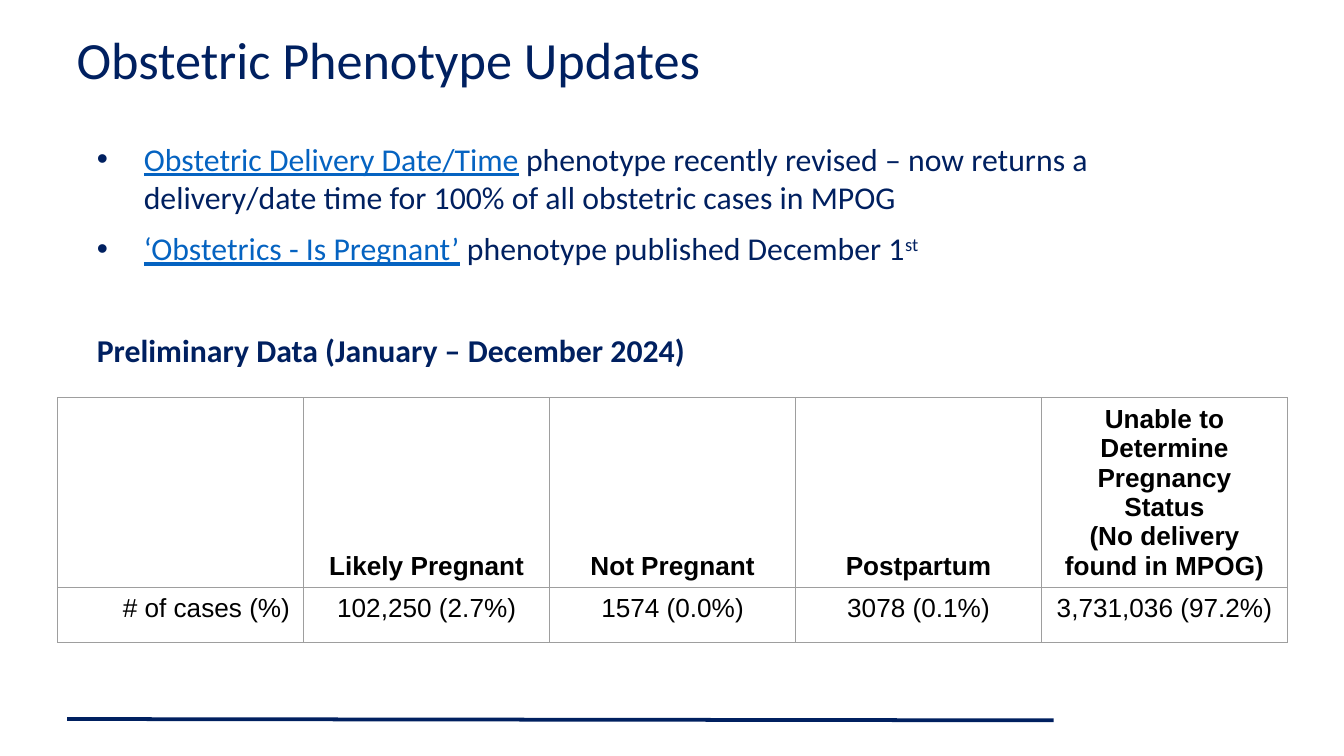
"""Build the obstetric phenotype updates slide."""
from lxml.etree import SubElement
from pptx import Presentation
from pptx.dml.color import RGBColor
from pptx.enum.shapes import MSO_CONNECTOR
from pptx.enum.text import MSO_ANCHOR, MSO_AUTO_SIZE, PP_ALIGN
from pptx.oxml.ns import qn
from pptx.util import Inches, Pt

NAVY = RGBColor(0x00, 0x20, 0x60)
LINK_BLUE = RGBColor(0x05, 0x63, 0xC1)
BLACK = RGBColor(0x00, 0x00, 0x00)
GRAY = RGBColor(0x9E, 0x9E, 0x9E)


def add_run(paragraph, text, size, color, font="Calibri", bold=False):
    run = paragraph.add_run()
    run.text = text
    run.font.name = font
    run.font.size = Pt(size)
    run.font.bold = bold
    run.font.color.rgb = color
    return run


def add_borders(cell):
    properties = cell._tc.get_or_add_tcPr()
    for side in ("a:lnL", "a:lnR", "a:lnT", "a:lnB"):
        border = SubElement(properties, qn(side), w=str(Pt(0.75)))
        fill = SubElement(border, qn("a:solidFill"))
        SubElement(fill, qn("a:srgbClr"), val=str(GRAY))


prs = Presentation()
prs.slide_width = Inches(10)
prs.slide_height = Inches(10 * 9 / 16)
slide = prs.slides.add_slide(prs.slide_layouts[1])

footer_rule = slide.shapes.add_connector(
    MSO_CONNECTOR.STRAIGHT, Inches(0.5), Inches(5.35), Inches(7.84), Inches(5.36))
footer_rule.line.color.rgb = NAVY
footer_rule.line.width = Pt(2)
SubElement(footer_rule._element.spPr, qn("a:effectLst"))

title = slide.shapes.title
body = slide.placeholders[1]
for holder, top, height, anchor in (
    (title, 0.08, 0.63, MSO_ANCHOR.BOTTOM),
    (body, 1, 4.06, MSO_ANCHOR.TOP),
):
    holder.left, holder.top = Inches(0.5), Inches(top)
    holder.width, holder.height = Inches(9), Inches(height)
    frame = holder.text_frame
    frame.word_wrap = True
    frame.auto_size = MSO_AUTO_SIZE.NONE
    frame.vertical_anchor = anchor
    frame.margin_left = frame.margin_right = Inches(0.07)
    frame.margin_top = frame.margin_bottom = Inches(0.04)

heading = title.text_frame.paragraphs[0]
heading.alignment = PP_ALIGN.LEFT
add_run(heading, "Obstetric Phenotype Updates", 28, NAVY)

updates = [
    ("Obstetric Delivery Date/Time",
     " phenotype recently revised – now returns a delivery/date time "
     "for 100% of all obstetric cases in MPOG"),
    ("‘Obstetrics - Is Pregnant’", " phenotype published December 1"),
]
for index, (phenotype, news) in enumerate(updates):
    update = body.text_frame.paragraphs[0] if index == 0 else body.text_frame.add_paragraph()
    update.space_before = Pt(7 if index else 0)
    layout = update._p.get_or_add_pPr()
    layout.set("marL", str(Inches(0.5)))
    layout.set("indent", str(Inches(-0.35)))
    bullet_color = SubElement(layout, qn("a:buClr"))
    SubElement(bullet_color, qn("a:srgbClr"), val=str(NAVY))
    SubElement(layout, qn("a:buFont"), typeface="Arial")
    SubElement(layout, qn("a:buChar"), char="•")
    add_run(update, phenotype, 17, LINK_BLUE).font.underline = True
    add_run(update, news, 17, NAVY)
ordinal = add_run(update, "st", 17, NAVY)
ordinal._r.get_or_add_rPr().set("baseline", "30000")

data_heading = body.text_frame.add_paragraph()
data_heading.space_before = Pt(34)
layout = data_heading._p.get_or_add_pPr()
layout.set("marL", str(Inches(0.15)))
layout.set("indent", "0")
SubElement(layout, qn("a:buNone"))
add_run(data_heading, "Preliminary Data (January – December 2024)", 17, NAVY, bold=True)

case_rows = [
    ["", "Likely Pregnant", "Not Pregnant", "Postpartum",
     "Unable to Determine Pregnancy Status\n(No delivery found in MPOG)"],
    ["# of cases (%)", "102,250 (2.7%)", "1574 (0.0%)", "3078 (0.1%)",
     "3,731,036 (97.2%)"],
]
cases = slide.shapes.add_table(
    2, 5, Inches(0.43), Inches(2.96), Inches(9.15), Inches(1.82)).table
cases.first_row = False
cases.horz_banding = False
cases.rows[0].height = Inches(1.41)
cases.rows[1].height = Inches(0.41)
for row, values in enumerate(case_rows):
    for column, value in enumerate(values):
        cell = cases.cell(row, column)
        add_borders(cell)
        cell.fill.background()
        cell.vertical_anchor = MSO_ANCHOR.TOP if row else MSO_ANCHOR.BOTTOM
        if not value:
            continue
        for number, line in enumerate(value.split("\n")):
            entry = cell.text_frame.add_paragraph() if number else cell.text_frame.paragraphs[0]
            entry.alignment = PP_ALIGN.CENTER if column else PP_ALIGN.RIGHT
            add_run(entry, line, 14, BLACK, "Arial", bold=row == 0)

prs.save("out.pptx")
